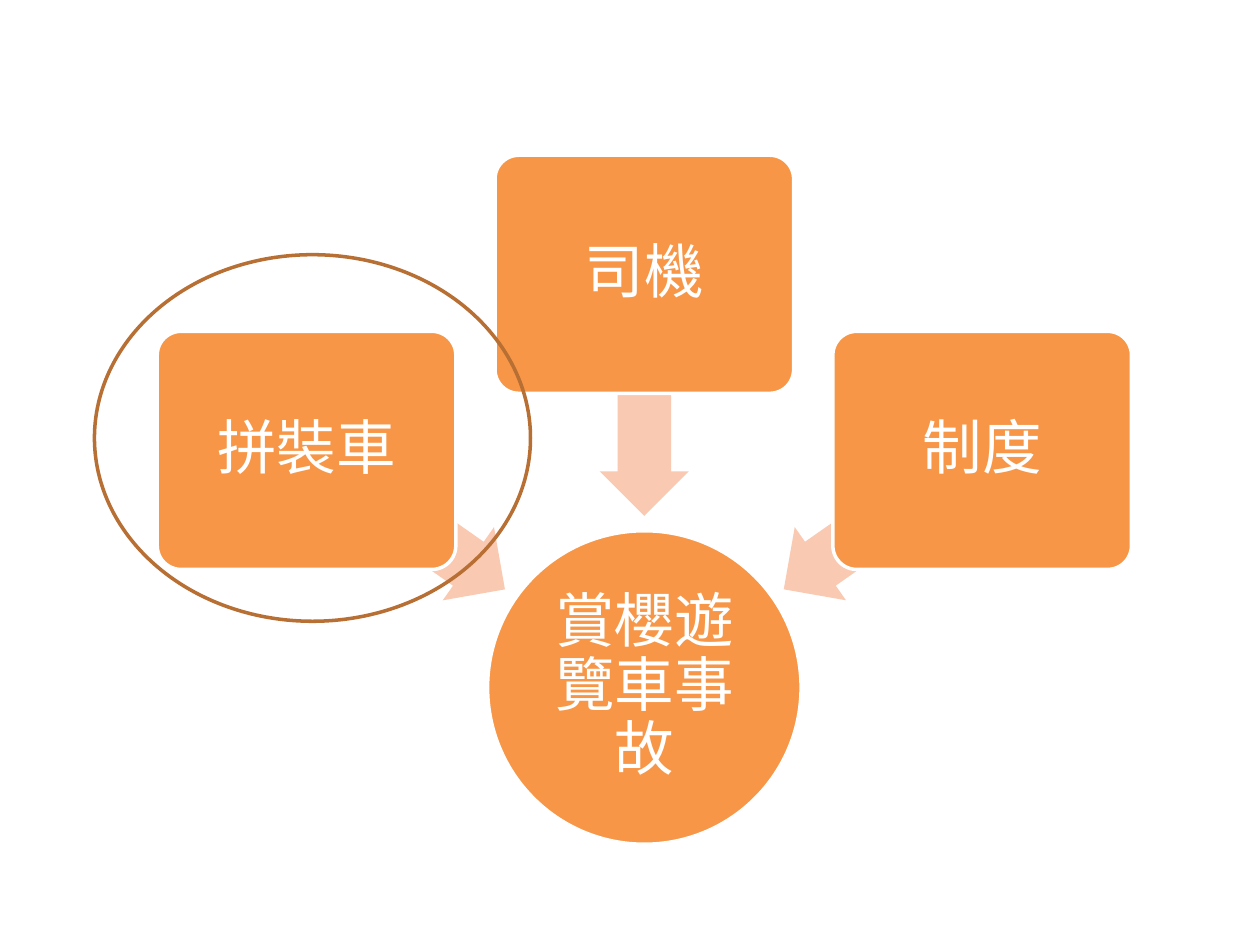
from pptx import Presentation
from pptx import util as u
from pptx.dml.color import RGBColor
from pptx.enum import shapes, text

WHITE = RGBColor(0xFF, 0xFF, 0xFF)
ORANGE = RGBColor(0xF7, 0x96, 0x46)
PEACH = RGBColor(0xFA, 0xC9, 0xB1)
BROWN = RGBColor(0xB7, 0x6F, 0x34)
KIND = shapes.MSO_SHAPE


class Page:
    """Style and current slide; shapes are placed by their centre, in cm."""
    font = "Calibri"
    size = u.Pt(34)
    edge = u.Pt(2)

    def __init__(self, slide):
        self.slide = slide

    def shape(self, kind, x, y, w, h, fill=None, line=None):
        item = self.slide.shapes.add_shape(
            kind, u.Cm(x - w / 2), u.Cm(y - h / 2), u.Cm(w), u.Cm(h))
        item.shadow.inherit = False
        if fill is None:
            item.fill.background()
        else:
            item.fill.solid()
            item.fill.fore_color.rgb = fill
        if line is None:
            item.line.fill.background()
        else:
            item.line.color.rgb = line
            item.line.width = self.edge
        return item

    def label(self, item, words, inset):
        frame = item.text_frame
        frame.word_wrap = True
        frame.vertical_anchor = text.MSO_ANCHOR.MIDDLE
        frame.margin_left = frame.margin_right = u.Cm(inset)
        frame.margin_top = frame.margin_bottom = u.Cm(inset)
        para = frame.paragraphs[0]
        para.text = words
        para.alignment = text.PP_ALIGN.CENTER
        para.line_spacing = 0.9
        para.font.name = self.font
        para.font.size = self.size
        para.font.color.rgb = WHITE

    def hub(self, words, x, y, d):
        item = self.shape(KIND.OVAL, x, y, d, d, ORANGE, WHITE)
        self.label(item, words, 0.05)

    def cause(self, words, x, y):
        item = self.shape(KIND.ROUNDED_RECTANGLE, x, y, 6.02, 4.8, ORANGE, WHITE)
        item.adjustments[0] = 0.1
        self.label(item, words, 0.18)

    def arrow(self, x, y, turn):
        item = self.shape(KIND.LEFT_ARROW, x, y, 4.88, 1.8, PEACH)
        item.adjustments[0] = 0.6
        item.adjustments[1] = 0.5
        item.rotation = turn

    def ring(self, x, y, w, h):
        self.shape(KIND.OVAL, x, y, w, h, line=BROWN)


def main():
    deck = Presentation()
    deck.slide_width, deck.slide_height = u.Cm(25.4), u.Cm(19.05)
    page = Page(deck.slides.add_slide(deck.slide_layouts[6]))

    mid = 12.99
    page.hub("賞櫻遊覽車事故", mid, 13.86, 6.32)
    # words, side, cause height, arrow height, arrow turn
    causes = [("拼裝車", -1, 9.08, 10.48, 215),
              ("司機", 0, 5.53, 7.96, 270),
              ("制度", 1, 9.08, 10.48, 325)]
    for words, side, top, low, turn in causes:
        page.arrow(mid + side * 4.81, low, turn)
        page.cause(words, mid + side * 6.81, top)
    page.ring(6.3, 8.83, 8.79, 7.39)

    deck.save("out.pptx")


if __name__ == "__main__":
    main()
